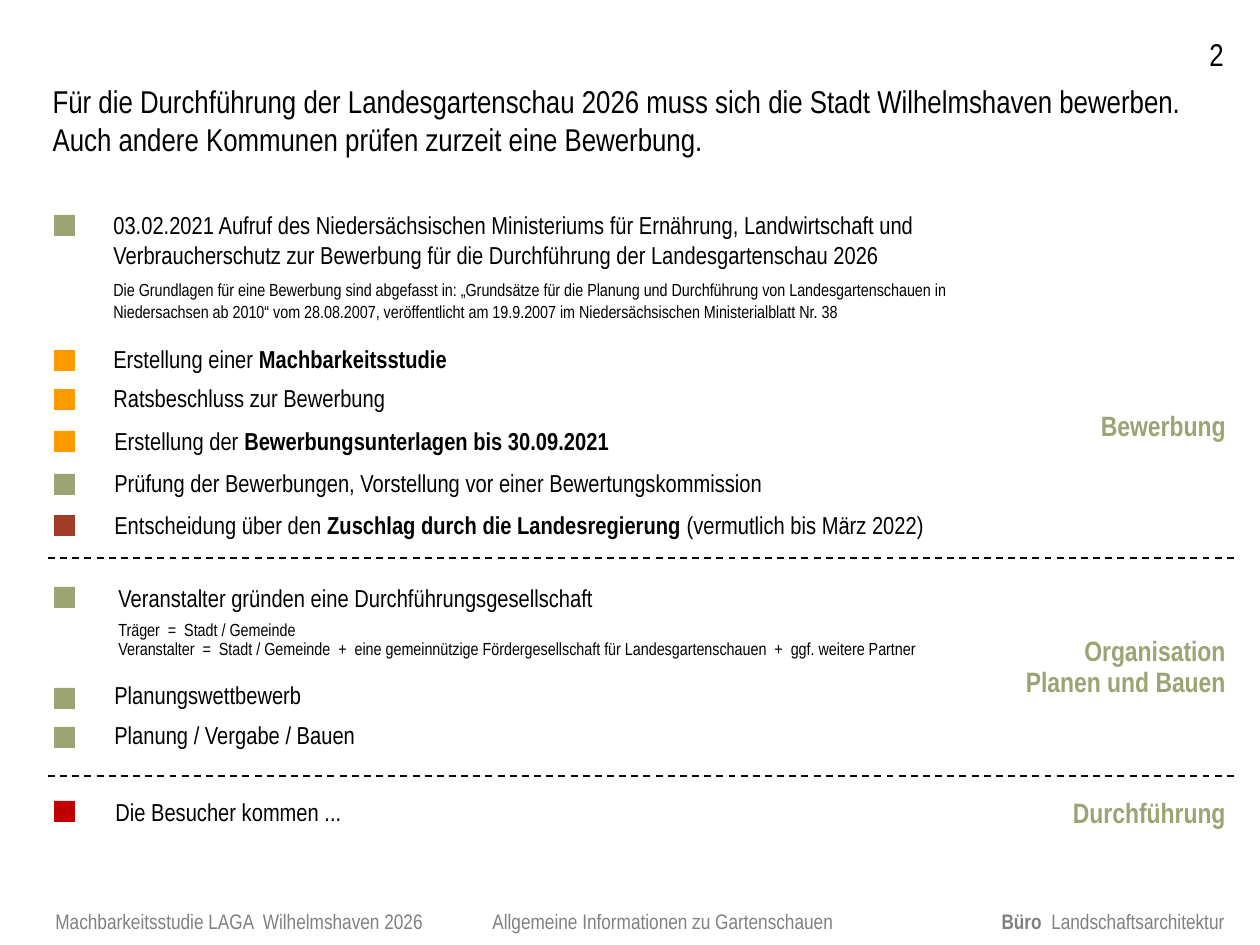
from lxml.etree import SubElement
from pptx import Presentation
from pptx.dml.color import RGBColor
from pptx.enum.dml import MSO_LINE
from pptx.enum.shapes import MSO_CONNECTOR, MSO_SHAPE
from pptx.enum.text import MSO_ANCHOR, MSO_AUTO_SIZE, PP_ALIGN
from pptx.oxml.ns import qn
from pptx.util import Pt

PX = 914400 / 126
FONT = "Arial Narrow"
BLACK, GREY, RULE = "000000", "808080", "080808"
OLIVE, ORANGE, RUST, RED = "9EA374", "FF9900", "A23A28", "C00000"
MARKER_LEFT, MARKER_SIZE = 54, 21
LABEL_RIGHT = 1238

# Steps: text left, text top, marker top, marker colour, text (*...* is bold)
STEPS = [
    (101, 341, 350, ORANGE, "Erstellung einer *Machbarkeitsstudie*"),
    (101, 380, 389, ORANGE, "Ratsbeschluss zur Bewerbung"),
    (102, 423, 431, ORANGE, "Erstellung der *Bewerbungsunterlagen bis 30.09.2021*"),
    (102, 465, 474, OLIVE,
     "Prüfung der Bewerbungen, Vorstellung vor einer Bewertungskommission"),
    (102, 507, 515, RUST,
     "Entscheidung über den *Zuschlag durch die Landesregierung *(vermutlich bis März 2022)"),
    (102, 677, 688, OLIVE, "Planungswettbewerb"),
    (102, 717, 727, OLIVE, "Planung / Vergabe / Bauen"),
    (103, 794, 801, RED, "Die Besucher kommen ..."),
]

# Phase labels: top, text
PHASES = [
    (402, "Bewerbung"),
    (627, "Organisation"),
    (658, "Planen und Bauen"),
    (789, "Durchführung"),
]


def px(length):
    return round(length * PX)


def rgb(colour):
    return RGBColor.from_string(colour)


def place(shape, left, top, width, height):
    shape.left, shape.top = px(left), px(top)
    shape.width, shape.height = px(width), px(height)


def write(frame, text, size=14, colour=BLACK, bold=False, align=PP_ALIGN.LEFT,
          spacing=1.0, before=0, after=0, first=True):
    """Write one paragraph; parts between asterisks are bold."""
    paragraph = frame.paragraphs[0] if first else frame.add_paragraph()
    paragraph.alignment = align
    paragraph.line_spacing = spacing
    paragraph.space_before, paragraph.space_after = Pt(before), Pt(after)
    for index, part in enumerate(text.split("*")):
        if part:
            run = paragraph.add_run()
            run.text = part
            run.font.name, run.font.size = FONT, Pt(size)
            run.font.bold = bold or index % 2 == 1
            run.font.color.rgb = rgb(colour)


def add_frame(slide, left, top, width, height, anchor=MSO_ANCHOR.TOP):
    box = slide.shapes.add_textbox(px(left), px(top), px(width), px(height))
    box.text_frame.word_wrap = True
    box.text_frame.vertical_anchor = anchor
    return box.text_frame


def add_title(slide, *lines):
    title = slide.shapes.title
    place(title, 40, 76, 1184, 89)
    frame = title.text_frame
    frame.auto_size = MSO_AUTO_SIZE.NONE
    frame.vertical_anchor = MSO_ANCHOR.TOP
    for index, line in enumerate(lines):
        write(frame, line, size=18, first=index == 0)


def add_marker(slide, top, colour):
    marker = slide.shapes.add_shape(
        MSO_SHAPE.RECTANGLE, px(MARKER_LEFT), px(top), px(MARKER_SIZE), px(MARKER_SIZE))
    marker.shadow.inherit = False
    marker.fill.solid()
    marker.fill.fore_color.rgb = rgb(colour)
    marker.line.fill.background()


def add_divider(slide, top):
    divider = slide.shapes.add_connector(
        MSO_CONNECTOR.STRAIGHT, px(48), px(top), px(1237), px(top))
    divider.line.color.rgb = rgb(RULE)
    divider.line.width = Pt(1)
    divider.line.dash_style = MSO_LINE.DASH
    SubElement(divider.element.spPr, qn("a:effectLst"))


def add_step(slide, left, top, marker_top, colour, text):
    add_marker(slide, marker_top, colour)
    write(add_frame(slide, left, top, 980, 39), text, spacing=0.9)


def add_phase(slide, top, text):
    width = 334
    frame = add_frame(slide, LABEL_RIGHT - width, top, width, 47)
    write(frame, text, size=16, colour=OLIVE, bold=True, align=PP_ALIGN.RIGHT)


def add_footer(slide, left, width, text, align=PP_ALIGN.LEFT):
    frame = add_frame(slide, left, 896, width, 50, MSO_ANCHOR.MIDDLE)
    write(frame, text, size=12, colour=GREY, align=align)


def main():
    presentation = Presentation()
    presentation.slide_width, presentation.slide_height = px(1260), px(945)
    slide = presentation.slides.add_slide(presentation.slide_layouts[5])

    # Heading and page number
    add_title(
        slide,
        "Für die Durchführung der Landesgartenschau 2026 muss sich die Stadt Wilhelmshaven bewerben.",
        "Auch andere Kommunen prüfen zurzeit eine Bewerbung.")
    write(add_frame(slide, 1131, 29, 105, 57), "2", size=18, align=PP_ALIGN.RIGHT)

    # Call for applications with its legal basis
    add_marker(slide, 215, OLIVE)
    call = add_frame(slide, 101, 204, 857, 125)
    write(call, "03.02.2021 Aufruf des Niedersächsischen Ministeriums für Ernährung, "
          "Landwirtschaft und Verbraucherschutz zur Bewerbung für die Durchführung "
          "der Landesgartenschau 2026", after=6)
    write(call, "Die Grundlagen für eine Bewerbung sind abgefasst in: „Grundsätze für die "
          "Planung und Durchführung von Landesgartenschauen in Niedersachsen ab 2010“ vom "
          "28.08.2007, veröffentlicht am 19.9.2007 im Niedersächsischen Ministerialblatt Nr. 38",
          size=10, after=6, first=False)

    # Founding of the operating company
    add_marker(slide, 587, OLIVE)
    company = add_frame(slide, 106, 580, 980, 88)
    write(company, "Veranstalter gründen eine Durchführungsgesellschaft", spacing=0.9)
    write(company, "Träger  =  Stadt / Gemeinde", size=10, spacing=0.9, before=5, first=False)
    write(company, "Veranstalter  =  Stadt / Gemeinde  +  eine gemeinnützige Fördergesellschaft "
          "für Landesgartenschauen  +  ggf. weitere Partner", size=10, spacing=0.9, first=False)

    # Single steps, phase labels and dividers
    for step in STEPS:
        add_step(slide, *step)
    for phase in PHASES:
        add_phase(slide, *phase)
    for top in (558, 776):
        add_divider(slide, top)

    # Footer
    add_footer(slide, 43, 420, "Machbarkeitsstudie LAGA  Wilhelmshaven 2026")
    add_footer(slide, 480, 420, "Allgemeine Informationen zu Gartenschauen")
    add_footer(slide, 907, 330, "*Büro * Landschaftsarchitektur", PP_ALIGN.RIGHT)

    presentation.save("out.pptx")


if __name__ == "__main__":
    main()
